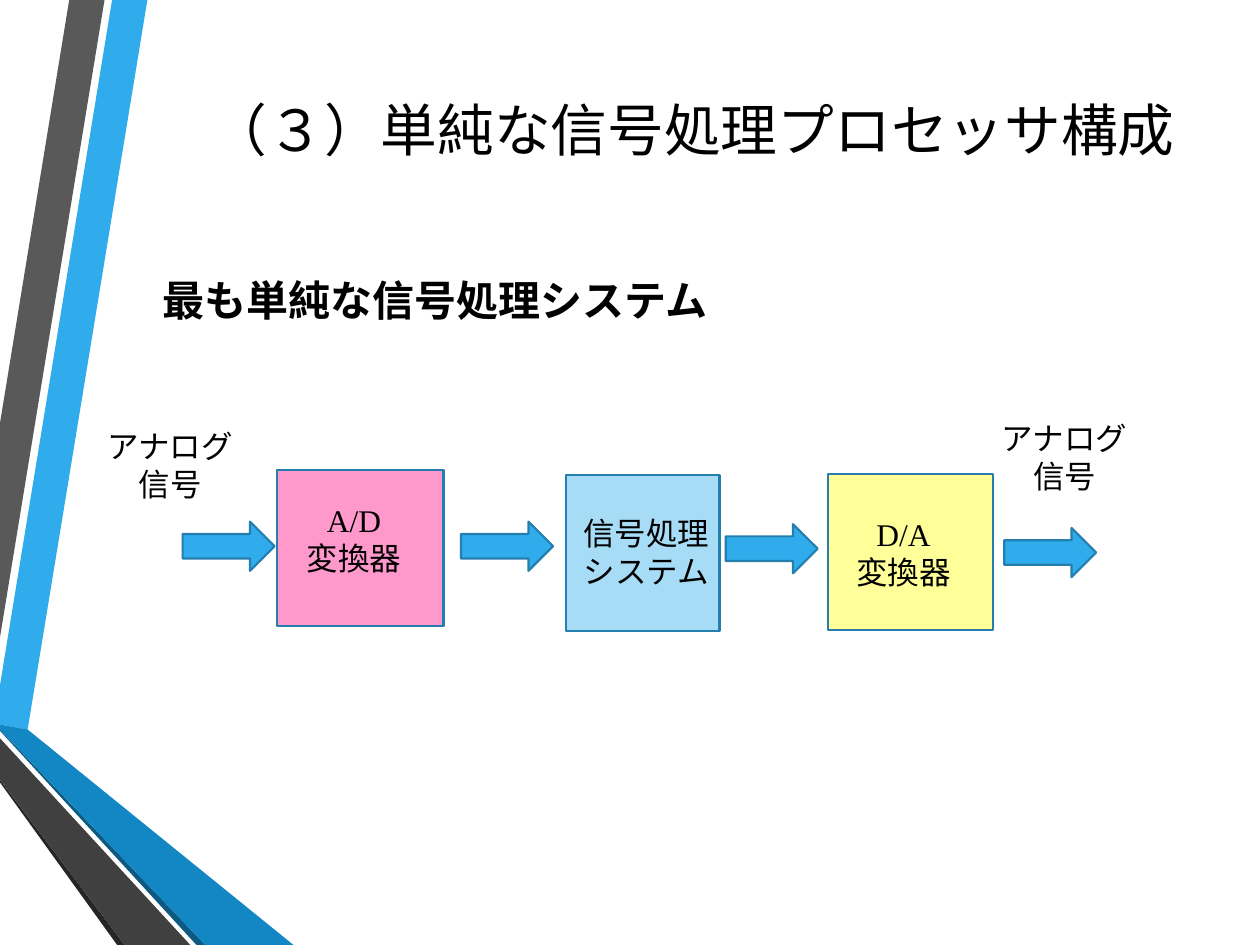
from pptx import Presentation
from pptx.dml.color import RGBColor
from pptx.enum.shapes import MSO_SHAPE as Shape
from pptx.enum.text import MSO_ANCHOR as Anchor, PP_ALIGN as Align
from pptx.util import Inches, Pt

BLACK = RGBColor(0x00, 0x00, 0x00)
BLUE = RGBColor(0x30, 0xAC, 0xEC)
OUTLINE = RGBColor(0x24, 0x7F, 0xAF)
PALE_BLUE = RGBColor(0xA7, 0xDC, 0xF7)
YELLOW = RGBColor(0xFF, 0xFF, 0x99)
PINK = RGBColor(0xFF, 0x99, 0xCC)
GRAY = RGBColor(0x59, 0x59, 0x59)
DARK_GRAY = RGBColor(0x40, 0x40, 0x40)
NEAR_BLACK = RGBColor(0x26, 0x26, 0x26)
MID_BLUE = RGBColor(0x12, 0x87, 0xC3)
DEEP_BLUE = RGBColor(0x0C, 0x5A, 0x82)

RIBBONS = [
    (BLUE, [(0, 5.44), (0, 5.75), (0.22, 5.79), (1.17, 0), (0.89, 0)]),
    (GRAY, [(0.83, 0), (0.55, 0), (0, 3.36), (0, 5.06)]),
    (NEAR_BLACK, [(0, 6.19), (0, 6.21), (0.93, 7.5), (0.99, 7.5)]),
    (DEEP_BLUE, [(0, 5.79), (0, 5.8), (1.56, 7.5), (1.63, 7.5)]),
    (MID_BLUE, [(0, 5.79), (1.63, 7.5), (2.33, 7.5), (0.22, 5.79), (0, 5.75)]),
    (DARK_GRAY, [(0, 6.19), (0.99, 7.5), (1.51, 7.5), (0, 5.86)]),
]

STAGES = [
    (PINK, (2.2, 3.73, 1.32, 1.24), "A/D\n変換器", (2.17, 3.93, 1.28, 0.91)),
    (PALE_BLUE, (4.49, 3.77, 1.22, 1.24), "信号処理システム", (4.49, 4.03, 1.28, 0.71)),
    (YELLOW, (6.57, 3.76, 1.31, 1.24), "D/A\n変換器", (6.53, 4.04, 1.28, 0.71)),
]
ARROWS = [(1.45, 4.14), (3.66, 4.14), (5.76, 4.16), (7.97, 4.19)]
SIGNALS = [(0.71, 3.34), (7.81, 3.28)]


def emu(box):
    return [Inches(length) for length in box]


def add_text(slide, box, text, size, font, align, anchor=Anchor.TOP, bold=False):
    frame = slide.shapes.add_textbox(*emu(box)).text_frame
    frame.word_wrap = True
    frame.vertical_anchor = anchor
    frame.text = text
    for paragraph in frame.paragraphs:
        paragraph.alignment = align
        for run in paragraph.runs:
            run.font.size = Pt(size)
            run.font.name = font
            run.font.bold = bold
            run.font.color.rgb = BLACK


def add_label(slide, box, text):
    add_text(slide, box, text, 18, "Times New Roman", Align.CENTER)


def add_block(slide, preset, box, color):
    block = slide.shapes.add_shape(preset, *emu(box))
    block.shadow.inherit = False
    block.fill.solid()
    block.fill.fore_color.rgb = color
    block.line.color.rgb = OUTLINE
    block.line.width = Pt(1.25)


def add_ribbons(slide, left, top):
    for color, points in RIBBONS:
        start, *rest = [emu((left + x, top + y)) for x, y in points]
        builder = slide.shapes.build_freeform(*start)
        builder.add_line_segments(rest, close=True)
        ribbon = builder.convert_to_shape()
        ribbon.shadow.inherit = False
        ribbon.fill.solid()
        ribbon.fill.fore_color.rgb = color
        ribbon.line.fill.background()


def add_headings(slide, title_box, subtitle_box):
    add_text(slide, title_box, "（３）単純な信号処理プロセッサ構成", 32.4, "Cabin",
             Align.RIGHT, Anchor.MIDDLE)
    add_text(slide, subtitle_box, "最も単純な信号処理システム", 24, "Cabin",
             Align.LEFT, bold=True)


def add_signal_chain(slide, left, top):
    def shifted(box):
        x, y, *size = box
        return (left + x, top + y, *size)

    for color, stage_box, caption, caption_box in STAGES:
        add_block(slide, Shape.RECTANGLE, shifted(stage_box), color)
        add_label(slide, shifted(caption_box), caption)
    for corner in ARROWS:
        add_block(slide, Shape.RIGHT_ARROW, shifted((*corner, 0.73, 0.39)), BLUE)
    for corner in SIGNALS:
        add_label(slide, shifted((*corner, 1.28, 0.91)), "アナログ信号")


def main():
    deck = Presentation()
    deck.slide_width, deck.slide_height = Inches(10), Inches(7.5)
    slide = deck.slides.add_slide(deck.slide_layouts[6])
    add_ribbons(slide, 0, 0)
    add_headings(slide, (0.92, 0.46, 8.5, 1.12), (1.19, 2.13, 8.58, 0.58))
    add_signal_chain(slide, 0, 0)
    deck.save("out.pptx")


if __name__ == "__main__":
    main()
